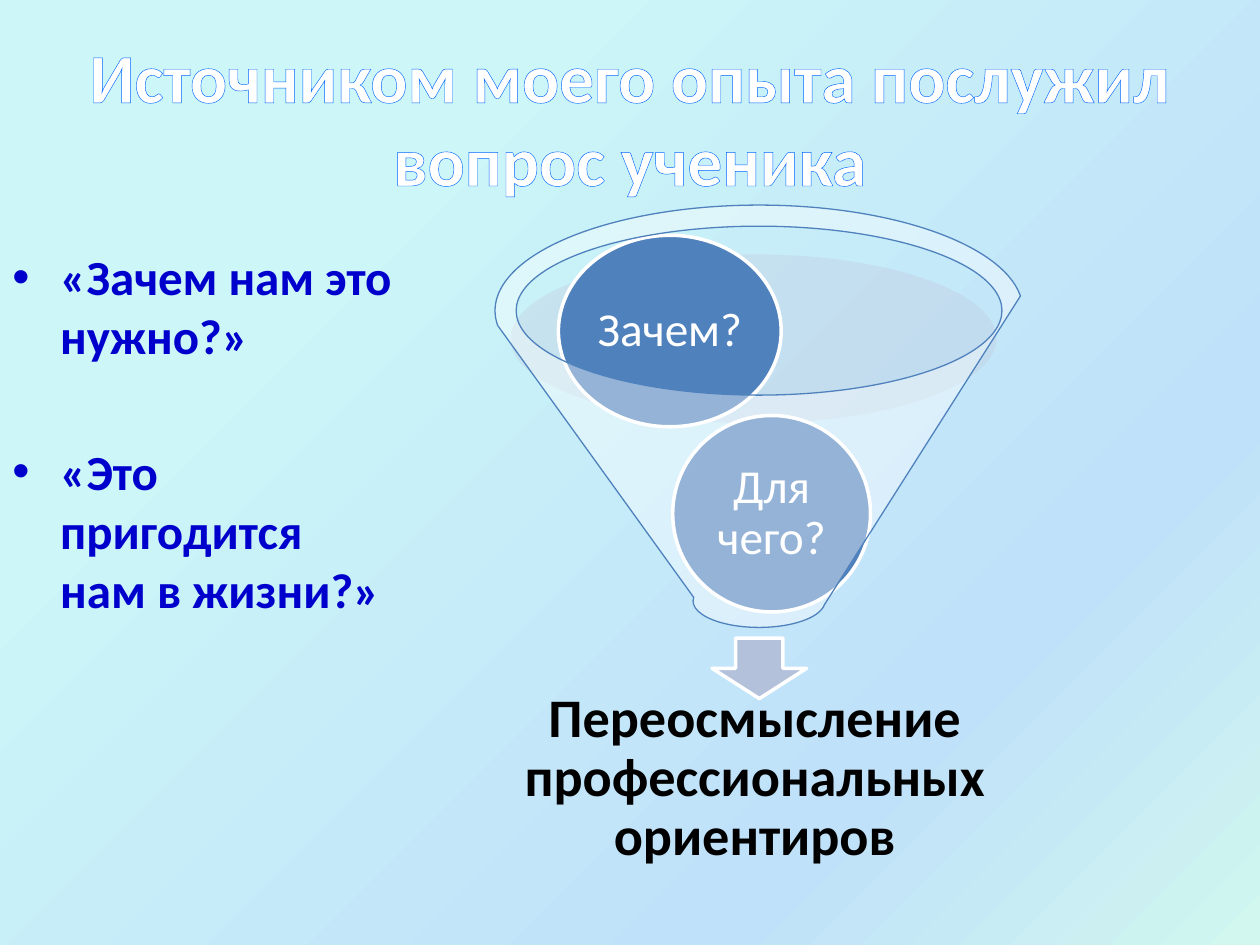
import copy

from lxml import etree
from pptx import Presentation
from pptx import util as u
from pptx.dml.color import RGBColor
from pptx.enum import shapes, text
from pptx.oxml import ns

FONT = "Calibri"
WHITE = RGBColor(255, 255, 255)
BLACK = RGBColor(0, 0, 0)
QUOTE_BLUE = RGBColor(0, 0, 0xCC)
OUTLINE_BLUE = RGBColor(0, 0x66, 0xFF)
BALL_BLUE = RGBColor(0x4F, 0x81, 0xBD)
LIQUID = RGBColor(0xC2, 0xCD, 0xE1)
ARROW = RGBColor(0xB3, 0xC1, 0xDB)
BACKDROP = [
    (0.25, RGBColor(0xCC, 0xF6, 0xF8)),
    (0.75, RGBColor(0xBF, 0xE1, 0xF9)),
    (1.0, RGBColor(0xD1, 0xF7, 0xEF)),
]


def within(box, x, y, w, h):
    """Return the part of a box given by shares of its width and height."""
    left, top, width, height = box
    return [int(n) for n in (left + x * width, top + y * height, w * width, h * height)]


def sub(parent, tag, **attributes):
    """Append a DrawingML element to a parent."""
    return etree.SubElement(parent, ns.qn(tag), **attributes)


def write(paragraph, wording, size, color, bold=False, align=text.PP_ALIGN.CENTER,
          spacing=None, before=None):
    """Put one formatted run into a paragraph and return the run."""
    paragraph.alignment = align
    paragraph.line_spacing = spacing
    paragraph.space_before = before
    run = paragraph.add_run()
    run.text = wording
    run.font.name, run.font.size, run.font.bold = FONT, u.Pt(size), bold
    run.font.color.rgb = color
    return run


def set_frame(frame, inset, anchor=text.MSO_ANCHOR.MIDDLE):
    """Make a text frame wrap with equal insets."""
    frame.word_wrap = True
    frame.auto_size = text.MSO_AUTO_SIZE.NONE
    frame.vertical_anchor = anchor
    frame.margin_left = frame.margin_right = u.Inches(inset)
    frame.margin_top = frame.margin_bottom = u.Inches(inset)


def add_figure(slide, kind, box, fill, line=None, line_width=2, alpha=None):
    """Add a preset shape with a plain fill and an optional line."""
    figure = slide.shapes.add_shape(kind, *box)
    figure.shadow.inherit = False
    figure.fill.solid()
    figure.fill.fore_color.rgb = fill
    if alpha:
        sub(figure.fill._xPr.find(".//" + ns.qn("a:srgbClr")), "a:alpha", val=str(alpha * 1000))
    if line is None:
        figure.line.fill.background()
    else:
        figure.line.color.rgb = line
        figure.line.width = u.Pt(line_width)
    return figure


def paint_background(slide):
    """Fill the slide with a diagonal three-colour gradient."""
    fill = slide.background.fill
    fill.gradient()
    fill.gradient_angle = 315
    stops = slide.element.find(".//" + ns.qn("a:gsLst"))
    stops.append(copy.deepcopy(stops[0]))
    for stop, (position, color) in zip(fill.gradient_stops, BACKDROP):
        stop.position = position
        stop.color.rgb = color


def place_title(slide, box):
    """Place the outlined title in its placeholder."""
    title = slide.shapes.title
    title.left, title.top, title.width, title.height = box
    set_frame(title.text_frame, 0.05)
    run = write(title.text_frame.paragraphs[0],
                "Источником моего опыта послужил вопрос ученика", 39.6, WHITE, bold=True)
    outline = etree.Element(ns.qn("a:ln"), w=str(u.Pt(1.45)))
    sub(sub(outline, "a:solidFill"), "a:srgbClr", val=str(OUTLINE_BLUE))
    run.font._element.insert(0, outline)


def place_questions(slide, box):
    """Place the bulleted questions of the pupil."""
    frame = slide.shapes.add_textbox(*box).text_frame
    set_frame(frame, 0.1, text.MSO_ANCHOR.TOP)
    questions = ["«Зачем нам это нужно?»", "«Это пригодится нам в жизни?»"]
    for index, question in enumerate(questions):
        paragraph = frame.add_paragraph() if index else frame.paragraphs[0]
        properties = paragraph._p.get_or_add_pPr()
        indent = u.Inches(0.38)
        properties.set("marL", str(indent))
        properties.set("indent", str(-indent))
        sub(properties, "a:buFont", typeface="Arial")
        sub(properties, "a:buChar", char="•")
        write(paragraph, question, 28, QUOTE_BLUE, bold=True, align=text.PP_ALIGN.LEFT,
              before=u.Pt(44) if index else None)


def place_funnel(slide, box):
    """Place the funnel with its two questions, the arrow and the outcome."""
    preset = shapes.MSO_SHAPE
    add_figure(slide, preset.OVAL, within(box, 0.036, 0.07, 0.914, 0.24), LIQUID, alpha=40)
    add_figure(slide, preset.DOWN_ARROW, within(box, 0.415, 0.615, 0.178, 0.086), ARROW, WHITE)

    outcome = slide.shapes.add_textbox(*within(box, 0, 0.63, 0.99, 0.37)).text_frame
    set_frame(outcome, 0.24)
    write(outcome.paragraphs[0], "Переосмысление профессиональных ориентиров",
          31, BLACK, bold=True, spacing=0.9)

    balls = [
        ("Для чего?", (0.341, 0.299, 0.372, 0.279)),
        ("Зачем?", (0.126, 0.043, 0.419, 0.272)),
    ]
    for question, shares in balls:
        ball = add_figure(slide, preset.OVAL, within(box, *shares), BALL_BLUE, WHITE)
        set_frame(ball.text_frame, 0.04)
        write(ball.text_frame.paragraphs[0], question, 27, WHITE, spacing=0.9)

    add_figure(slide, preset.FUNNEL, within(box, 0.007, 0, 0.993, 0.6), WHITE,
               BALL_BLUE, line_width=0.75, alpha=40)


def main():
    """Build the slide and save it."""
    deck = Presentation()
    deck.slide_width, deck.slide_height = u.Inches(10), u.Inches(7.5)
    page = (0, 0, deck.slide_width, deck.slide_height)
    slide = deck.slides.add_slide(deck.slide_layouts[5])
    paint_background(slide)
    place_title(slide, within(page, 0.05, 0.04, 0.9, 0.167))
    place_funnel(slide, within(page, 0.39, 0.217, 0.422, 0.745))
    place_questions(slide, within(page, 0, 0.248, 0.323, 0.645))
    deck.save("out.pptx")


if __name__ == "__main__":
    main()
